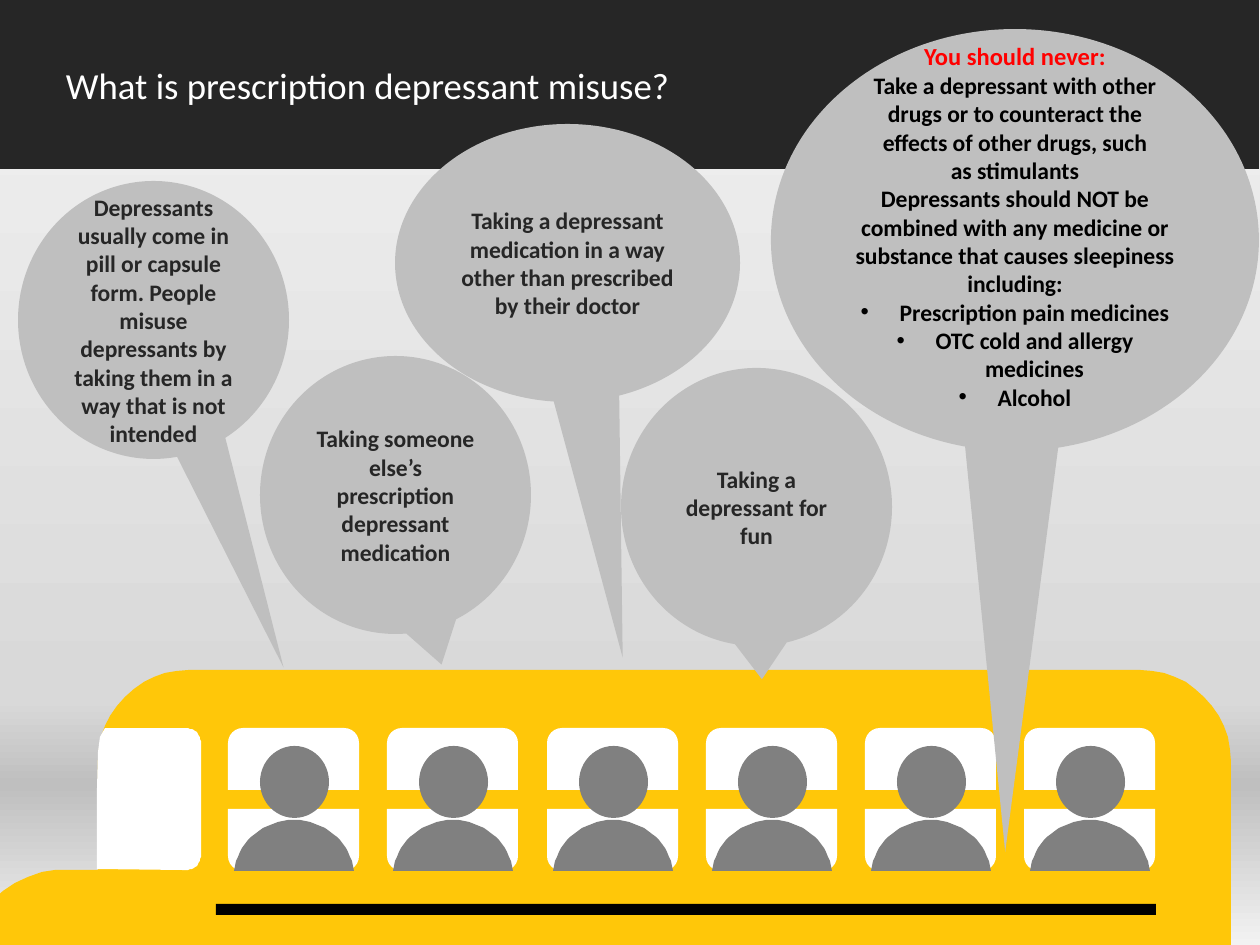
from copy import deepcopy
from math import cos, radians, sin

from lxml import etree
from pptx import Presentation
from pptx.dml.color import RGBColor
from pptx.enum.shapes import MSO_SHAPE
from pptx.enum.text import MSO_ANCHOR, PP_ALIGN
from pptx.oxml.ns import qn
from pptx.util import Emu, Pt

SCALE = 914400 / 126
FONT = "Calibri"

RECTANGLE = MSO_SHAPE.RECTANGLE
ELLIPSE = MSO_SHAPE.OVAL
CALLOUT = MSO_SHAPE.OVAL_CALLOUT
WINDOW = MSO_SHAPE.ROUND_2_SAME_RECTANGLE
MIDDLE = MSO_ANCHOR.MIDDLE
LEFT = PP_ALIGN.LEFT
CENTER = PP_ALIGN.CENTER

BLACK = RGBColor(0x00, 0x00, 0x00)
CHARCOAL = RGBColor(0x26, 0x26, 0x26)
GREY = RGBColor(0x80, 0x80, 0x80)
SILVER = RGBColor(0xBF, 0xBF, 0xBF)
LIGHT = RGBColor(0xD9, 0xD9, 0xD9)
PALE = RGBColor(0xF2, 0xF2, 0xF2)
WHITE = RGBColor(0xFF, 0xFF, 0xFF)
YELLOW = RGBColor(0xFF, 0xC7, 0x09)
RED = RGBColor(0xFF, 0x00, 0x00)

SEATS = 6
SEAT_STEP = 159.3
HOOD = [(98, 870), (55, 870), (42, 872), (28, 877), (15, 883), (3, 891),
        (-8, 901), (-18, 912), (-24, 924), (-28, 931), (-29, 938),
        (-14, 940), (-3, 945)]
WINDSHIELD = [(186, 728), (105, 728), (100, 737), (98, 752), (97, 789),
              (97, 869), (186, 870)]

SPEECH = [
    ("Taking a depressant for fun", (621, 368, 271, 278), (0.02, 0.62)),
    ("Taking someone else’s prescription depressant medication",
     (260, 356, 271, 278), (0.17, 0.61)),
    ("Depressants usually come in pill or capsule form. People misuse "
     "depressants by taking them in a way that is not intended",
     (18, 181, 271, 278), (0.48, 1.25)),
    ("Taking a depressant medication in a way other than prescribed by "
     "their doctor", (395, 124, 345, 278), (0.16, 1.42)),
]
WARNINGS = [
    "Take a depressant with other drugs or to counteract the effects of "
    "other drugs, such as\u00a0stimulants",
    "Depressants should NOT be combined with any medicine or substance "
    "that causes sleepiness including:",
]
SUBSTANCES = ["Prescription pain medicines", "OTC cold and allergy medicines",
              "Alcohol"]


def px(length):
    return Emu(round(length * SCALE))


def paint(shape, color):
    shape.shadow.inherit = False
    shape.fill.solid()
    shape.fill.fore_color.rgb = color
    shape.line.fill.background()
    return shape


def add_preset(shapes, kind, place, color, adjust=()):
    shape = shapes.add_shape(kind, *map(px, place))
    for index, value in enumerate(adjust):
        shape.adjustments[index] = value
    return paint(shape, color)


def add_outline(shapes, points, color):
    builder = shapes.build_freeform(*points[0], scale=SCALE)
    builder.add_line_segments(points[1:], close=True)
    return paint(builder.convert_to_shape(), color)


def arc(center_x, center_y, radius, start, end, steps=12):
    angles = [radians(start + (end - start) * i / steps) for i in range(steps + 1)]
    return [(center_x + radius * cos(a), center_y - radius * sin(a)) for a in angles]


def bezier(first, second, third, fourth, steps=16):
    points = []
    for i in range(steps + 1):
        t = i / steps
        weights = ((1 - t) ** 3, 3 * t * (1 - t) ** 2, 3 * t * t * (1 - t), t ** 3)
        points.append(tuple(
            sum(w * v for w, v in zip(weights, values))
            for values in zip(first, second, third, fourth)))
    return points


def add_text(shape, text, size=13.5, color=CHARCOAL, bold=True, align=CENTER,
             bullet=False, new=False):
    frame = shape.text_frame
    frame.word_wrap = True
    frame.vertical_anchor = MIDDLE
    para = frame.add_paragraph() if new else frame.paragraphs[0]
    para.alignment = align
    span = para.add_run()
    span.text = text
    span.font.name = FONT
    span.font.size = Pt(size)
    span.font.bold = bold
    span.font.color.rgb = color
    if bullet:
        properties = para._p.get_or_add_pPr()
        properties.set("marL", str(px(39)))
        properties.set("indent", str(-px(39)))
        etree.SubElement(properties, qn("a:buFont")).set("typeface", "Arial")
        etree.SubElement(properties, qn("a:buChar")).set("char", "•")


def add_backdrop(page):
    fill = page.background.fill
    fill.gradient()
    fill.gradient_angle = 270
    stop_list = page.element.xpath(".//a:gsLst")[0]
    for _ in range(2):
        stop_list.append(deepcopy(stop_list[0]))
    colors = ((0, PALE), (0.74, LIGHT), (0.83, SILVER), (1, PALE))
    for stop, (position, color) in zip(fill.gradient_stops, colors):
        stop.position = position
        stop.color.rgb = color


def add_header(page):
    header = add_preset(page.shapes, RECTANGLE, (-1, 0, 1260, 169), CHARCOAL)
    header.text_frame.margin_left = px(67)
    add_text(header, "What is prescription depressant misuse?", size=21,
             color=WHITE, bold=False, align=LEFT)


def add_bus(page):
    shapes = page.shapes.add_group_shape().shapes
    roof = arc(1140, 761, 91, 0, 90) + arc(189, 761, 91, 90, 180)
    add_outline(shapes, roof + HOOD + [(1231, 945)], YELLOW)
    for seat in range(SEATS):
        left = round(228 + seat * SEAT_STEP)
        add_preset(shapes, WINDOW, (left, 728, 131, 62), WHITE, (0.24, 0))
        add_preset(shapes, WINDOW, (left, 809, 131, 62), WHITE, (0, 0.24))
    corners = arc(186, 855, 15, -90, 0) + arc(186, 743, 15, 0, 90)
    add_outline(shapes, WINDSHIELD + corners, WHITE)
    add_preset(shapes, RECTANGLE, (216, 904, 940, 11), BLACK)


def add_passenger(page, center):
    shapes = page.shapes.add_group_shape().shapes
    add_preset(shapes, ELLIPSE, (center - 34, 746, 69, 72), GREY)
    half = bezier((0, 820), (30, 820), (54, 841), (59, 866)) + [(60, 871)]
    right = [(center + x, y) for x, y in half]
    left = [(center - x, y) for x, y in reversed(half)]
    add_outline(shapes, right + left, GREY)


def add_warning(page):
    bubble = add_preset(page.shapes, CALLOUT, (771, 29, 488, 422), SILVER,
                        (-0.02, 1.45))
    bubble.text_frame.margin_bottom = px(34)
    add_text(bubble, "You should never:", size=14, color=RED)
    for text in WARNINGS + SUBSTANCES:
        add_text(bubble, text, color=BLACK, bullet=text in SUBSTANCES, new=True)


def main():
    deck = Presentation()
    deck.slide_width = px(1260)
    deck.slide_height = px(945)
    page = deck.slides.add_slide(deck.slide_layouts[6])
    add_backdrop(page)
    add_header(page)
    add_bus(page)
    for seat in range(SEATS):
        add_passenger(page, round(294 + seat * SEAT_STEP))
    for text, place, tail in SPEECH:
        add_text(add_preset(page.shapes, CALLOUT, place, SILVER, tail), text)
    add_warning(page)
    deck.save("out.pptx")


if __name__ == "__main__":
    main()
